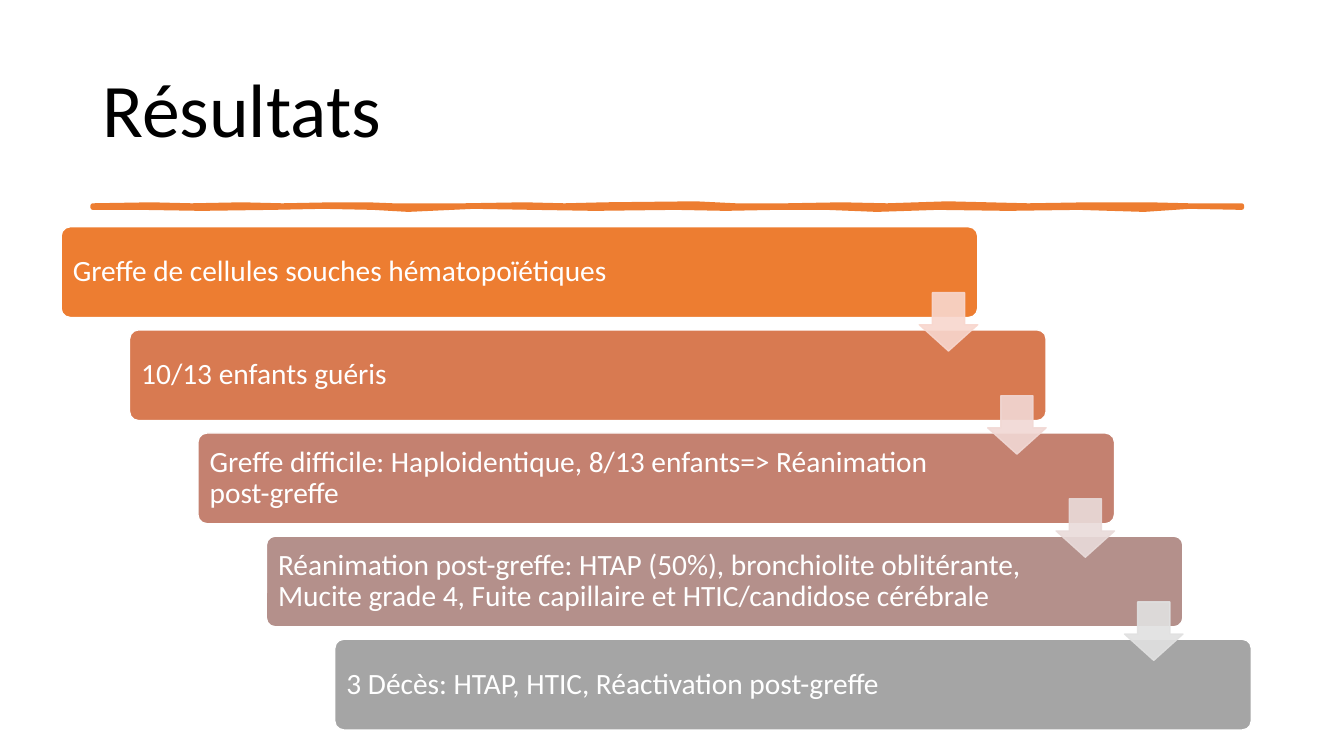
from dataclasses import dataclass

from lxml import etree
from pptx import Presentation
from pptx.dml.color import RGBColor
from pptx.enum.shapes import MSO_SHAPE
from pptx.enum.text import MSO_ANCHOR, PP_ALIGN
from pptx.oxml.ns import qn
from pptx.util import Emu, Inches, Pt

CARD = MSO_SHAPE.ROUNDED_RECTANGLE
ARROW = MSO_SHAPE.DOWN_ARROW
MIDDLE = MSO_ANCHOR.MIDDLE
LEFT = PP_ALIGN.LEFT

FONT = "Calibri"
BLACK = RGBColor(0x00, 0x00, 0x00)
WHITE = RGBColor(0xFF, 0xFF, 0xFF)
ORANGE = RGBColor(0xED, 0x7D, 0x31)
RUST = RGBColor(0xD8, 0x7A, 0x51)
ROSE = RGBColor(0xC4, 0x81, 0x70)
MAUVE = RGBColor(0xB4, 0x90, 0x8B)
GREY = RGBColor(0xA5, 0xA5, 0xA5)
PEACH = RGBColor(0xF8, 0xD7, 0xCE)
BLUSH = RGBColor(0xF1, 0xD8, 0xD4)
PALE = RGBColor(0xE9, 0xDB, 0xDA)
SILVER = RGBColor(0xE1, 0xE1, 0xE1)

WIDE, HIGH = Inches(13.333), Inches(7.5)


@dataclass
class Step:
    text: str
    fill: RGBColor
    tint: RGBColor | None = None  # colour of the arrow to the next step


STEPS = [
    Step("Greffe de cellules souches hématopoïétiques", ORANGE, PEACH),
    Step("10/13 enfants guéris", RUST, BLUSH),
    Step("Greffe difficile: Haploidentique, 8/13 enfants=> Réanimation post-greffe",
         ROSE, PALE),
    Step("Réanimation post-greffe: HTAP (50%), bronchiolite oblitérante, "
         "Mucite grade 4, Fuite capillaire et HTIC/candidose cérébrale",
         MAUVE, SILVER),
    Step("3 Décès: HTAP, HTIC, Réactivation post-greffe", GREY),
]

# Edges of the hand-drawn rule, in inches
UPPER = [(0.92, 2.04), (1.5, 2.03), (1.9, 2.04), (2.4, 2.03), (2.8, 2.04),
         (3.3, 2.03), (3.65, 2.03), (3.9, 2.04), (4.6, 2.04), (5.2, 2.03),
         (5.6, 2.04), (6, 2.03), (6.9, 2.02), (7.3, 2.04), (7.8, 2.04),
         (8.35, 2.03), (8.8, 2.04), (9.4, 2.02), (10.2, 2.04), (10.8, 2.03),
         (11.4, 2.03), (11.8, 2.04), (12.32, 2.04)]
LOWER = [(12.32, 2.06), (11.8, 2.05), (11.35, 2.08), (10.7, 2.06),
         (10, 2.07), (9.3, 2.06), (8.7, 2.08), (8.2, 2.06), (7.7, 2.06),
         (7.2, 2.07), (6.7, 2.06), (5.9, 2.07), (5.3, 2.06), (4.7, 2.05),
         (4.05, 2.08), (3.7, 2.06), (3.2, 2.05), (2.7, 2.06), (2, 2.07),
         (1.4, 2.06), (0.92, 2.06)]


def col(share: float) -> Emu:
    return Emu(round(WIDE * share / 100))


def row(share: float) -> Emu:
    return Emu(round(HIGH * share / 100))


def paint(shape, fill: RGBColor, line: RGBColor, width: float) -> None:
    shape.shadow.inherit = False
    shape.fill.solid()
    shape.fill.fore_color.rgb = fill
    shape.line.color.rgb = line
    shape.line.width = Pt(width)


def write(frame, text: str, size: float, color: RGBColor) -> None:
    frame.word_wrap = True
    frame.vertical_anchor = MIDDLE
    para = frame.paragraphs[0]
    para.alignment = LEFT
    para.line_spacing = 0.9
    run = para.add_run()
    run.text = text
    run.font.name = FONT
    run.font.size = Pt(size)
    run.font.color.rgb = color


def draw_rule(slide) -> None:
    points = [(Inches(x), Inches(y)) for x, y in UPPER + LOWER]
    pen = slide.shapes.build_freeform(*points[0])
    pen.add_line_segments(points[1:], close=True)
    paint(pen.convert_to_shape(), ORANGE, ORANGE, 3.25)


def draw_card(slide, rank: int, step: Step) -> None:
    card = slide.shapes.add_shape(CARD, col(4.55 + 5.09 * rank),
                                  row(30 + 13.64 * rank), col(68.2), row(12))
    card.adjustments[0] = 0.1
    paint(card, step.fill, WHITE, 1)
    frame = card.text_frame
    frame.margin_left = Inches(0.09)
    frame.margin_right = Inches(1.35)  # keeps text clear of the arrow
    write(frame, step.text, 21, WHITE)


def draw_arrow(slide, rank: int, tint: RGBColor) -> None:
    arrow = slide.shapes.add_shape(ARROW, col(68.4 + 5.09 * rank),
                                   row(38.7 + 13.64 * rank), col(4.35), row(7.73))
    arrow.adjustments[0] = 0.45
    arrow.adjustments[0], arrow.adjustments[1] = 0.55, 0.45
    paint(arrow, tint, tint, 1)
    for color in arrow.element.spPr.iter(qn("a:srgbClr")):
        etree.SubElement(color, qn("a:alpha"), val="90000")


def main() -> None:
    deck = Presentation()
    deck.slide_width, deck.slide_height = WIDE, HIGH
    slide = deck.slides.add_slide(deck.slide_layouts[6])

    # Title and rule
    title = slide.shapes.add_textbox(col(6.88), row(5.33), col(86.25), row(19.33))
    write(title.text_frame, "Résultats", 54, BLACK)
    draw_rule(slide)

    # Staircase of steps, then the arrows over it
    for rank, step in enumerate(STEPS):
        draw_card(slide, rank, step)
    for rank, step in enumerate(STEPS):
        if step.tint is not None:
            draw_arrow(slide, rank, step.tint)

    deck.save("out.pptx")


if __name__ == "__main__":
    main()
